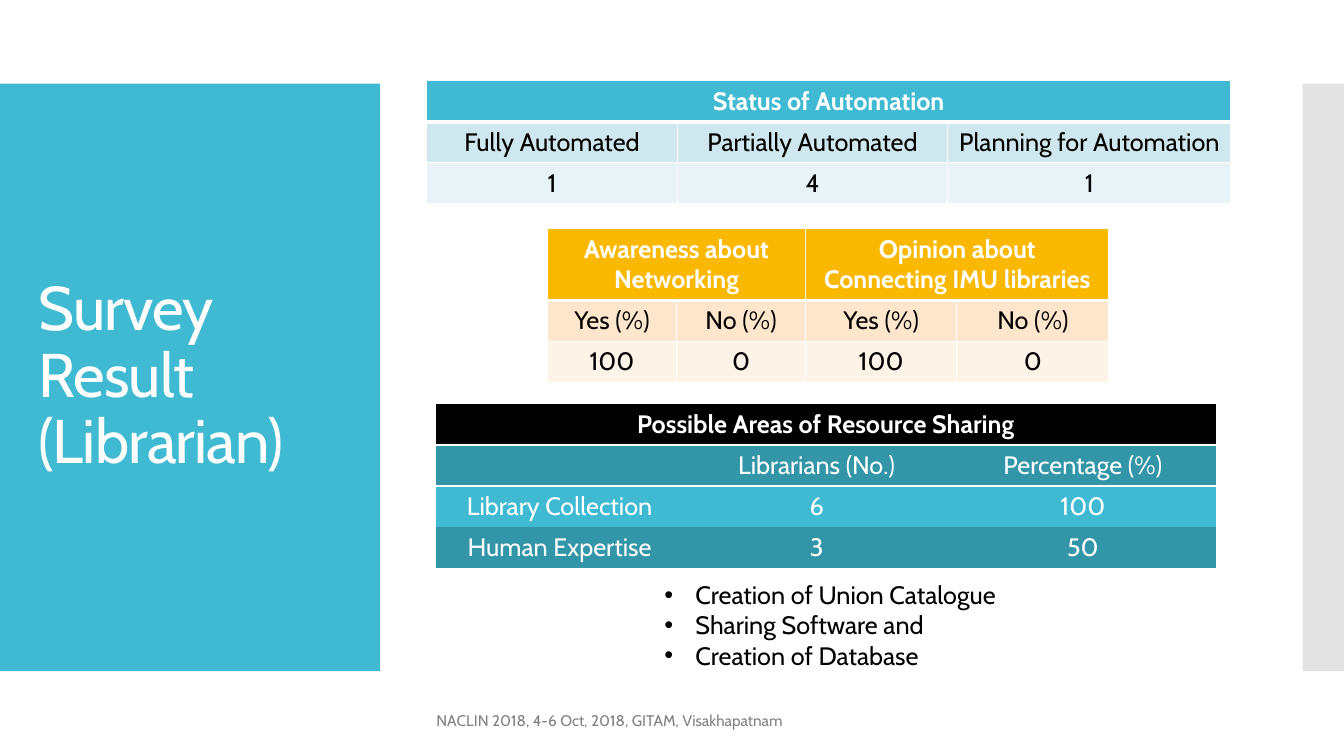
import pptx
import pptx.dml.color
import pptx.enum.shapes
import pptx.enum.text
import pptx.oxml
import pptx.oxml.ns
import pptx.util
from lxml import etree

PX = 9144  # EMU; 100 px to the inch
THEME = {
    "font": "Cabin",
    "title_size": 44, "body_size": 18, "footer_size": 11,
    "white": "FFFFFF", "black": "000000", "footer_grey": "808080",
    "teal": "40BAD2", "dark_teal": "3395A8", "side_grey": "C8C8C8",
    "teal_tint": "CFE7EE", "pale_teal": "E8F3F7",
    "amber": "FAB900", "amber_tint": "FDE6CC", "pale_amber": "FEF3E7",
}
ALIGN = pptx.enum.text.PP_ALIGN
ANCHOR = pptx.enum.text.MSO_ANCHOR
NO_TABLE_STYLE = "{2D5ABB26-0587-4C30-8999-92F81FD0307C}"


def color(name):
    return pptx.dml.color.RGBColor.from_string(THEME[name])


def write(text_frame, text, size="body_size", ink="black", bold=False,
          align=ALIGN.LEFT, line_spacing=None, tracking=None, bullet_indent=None):
    """Fill the frame, one paragraph per line of text; a vertical tab breaks a line."""
    for number, line in enumerate(text.split("\n")):
        paragraph = text_frame.add_paragraph() if number else text_frame.paragraphs[0]
        paragraph.text = line
        paragraph.alignment = align
        paragraph.line_spacing = line_spacing
        if bullet_indent:
            properties = paragraph._p.get_or_add_pPr()
            properties.set("marL", str(bullet_indent * PX))
            properties.set("indent", str(-bullet_indent * PX))
            for tag, key, value in (("a:buFont", "typeface", "Arial"), ("a:buChar", "char", "•")):
                etree.SubElement(properties, pptx.oxml.ns.qn(tag)).set(key, value)
        for run in paragraph.runs:
            run.font.name = THEME["font"]
            run.font.size = pptx.util.Pt(THEME[size])
            run.font.bold = bold
            run.font.color.rgb = color(ink)
            if tracking:
                run._r.get_or_add_rPr().set("spc", str(tracking))


presentation = pptx.Presentation()
presentation.slide_width = 1333 * PX
presentation.slide_height = 750 * PX
slide = presentation.slides.add_slide(presentation.slide_layouts[5])

# Side panels
for left, width, fill, opacity in ((0, 377, "teal", 100), (1292, 41, "side_grey", 50)):
    panel = slide.shapes.add_shape(pptx.enum.shapes.MSO_SHAPE.RECTANGLE,
                                   left * PX, 83 * PX, width * PX, 583 * PX)
    panel.shadow.inherit = False
    panel.fill.solid()
    panel.fill.fore_color.rgb = color(fill)
    panel.line.fill.background()
    if opacity < 100:
        tint = panel._element.spPr.find(".//" + pptx.oxml.ns.qn("a:srgbClr"))
        etree.SubElement(tint, pptx.oxml.ns.qn("a:alpha")).set("val", str(opacity * 1000))

# Title, moved in front of the panels
title = slide.shapes.title
slide.shapes._spTree.append(title._element)
title.left, title.top, title.width, title.height = (n * PX for n in (28, 123, 322, 503))
title.text_frame.auto_size = pptx.enum.text.MSO_AUTO_SIZE.NONE
title.text_frame.word_wrap = True
title.text_frame.vertical_anchor = ANCHOR.MIDDLE
write(title.text_frame, "Survey Result\v(Librarian)", size="title_size", ink="white",
      line_spacing=0.9, tracking=-60)

# Tables: None continues the cell to its left; rules are widths in points
tables = [
    {"at": (423, 80), "columns": (249, 268, 281), "rows": (41, 40, 40),
     "fills": ("teal", "teal_tint", "pale_teal"),
     "ink": "black", "rule": 1, "header_rule": 3,
     "cells": [("Status of Automation", None, None),
               ("Fully Automated", "Partially Automated", "Planning for Automation"),
               ("1", "4", "1")]},
    {"at": (543, 227), "columns": (128, 128, 150, 151), "rows": (71, 40, 40),
     "fills": ("amber", "amber_tint", "pale_amber"),
     "ink": "black", "rule": 1, "header_rule": 3,
     "cells": [("Awareness about Networking", None,
                "Opinion about Connecting IMU libraries", None),
               ("Yes (%)", "No (%)", "Yes (%)", "No (%)"),
               ("100", "0", "100", "0")]},
    {"at": (432, 401), "columns": (246, 264, 264), "rows": (40, 40, 40, 40),
     "fills": ("black", "dark_teal", "teal", "dark_teal"),
     "ink": "white", "rule": 0, "header_rule": 2,
     "cells": [("Possible Areas of Resource Sharing", None, None),
               ("", "Librarians (No.)", "Percentage (%)"),
               ("Library Collection", "6", "100"),
               ("Human Expertise", "3", "50")]},
]
for data in tables:
    left, top = data["at"]
    table = slide.shapes.add_table(
        len(data["rows"]), len(data["columns"]), left * PX, top * PX,
        sum(data["columns"]) * PX, sum(data["rows"]) * PX).table
    table.horz_banding = False
    table._tbl.tblPr.find(pptx.oxml.ns.qn("a:tableStyleId")).text = NO_TABLE_STYLE
    for column, width in zip(table.columns, data["columns"]):
        column.width = width * PX
    for row, height in zip(table.rows, data["rows"]):
        row.height = height * PX

    for row_number, texts in enumerate(data["cells"]):
        is_header = row_number == 0
        rule, header_rule = data["rule"], data["header_rule"]
        sides = {"L": rule, "R": rule,
                 "T": header_rule if row_number == 1 else rule,
                 "B": header_rule if is_header else rule}
        for column_number, text in enumerate(texts):
            cell = table.cell(row_number, column_number)
            properties = cell._tc.get_or_add_tcPr()
            for side, points in sides.items():
                if points:
                    properties.append(pptx.oxml.parse_xml(
                        f'<a:ln{side} {pptx.oxml.ns.nsdecls("a")} w="{points * 12700}">'
                        f'<a:solidFill><a:srgbClr val="{THEME["white"]}"/></a:solidFill>'
                        f'</a:ln{side}>'))
            cell.fill.solid()
            cell.fill.fore_color.rgb = color(data["fills"][row_number])
            if text is None:
                continue
            write(cell.text_frame, text, ink="white" if is_header else data["ink"],
                  bold=is_header, align=ALIGN.CENTER)
            end = column_number
            while end + 1 < len(texts) and texts[end + 1] is None:
                end += 1
            if end > column_number:
                cell.merge(table.cell(row_number, end))

# Sharing ideas and footer
text_boxes = [
    ((649, 570, 360, 101), ANCHOR.TOP,
     "Creation of Union Catalogue\nSharing Software and\nCreation of Database",
     {"bullet_indent": 31}),
    ((423, 695, 646, 40), ANCHOR.MIDDLE,
     "NACLIN 2018, 4-6 Oct, 2018, GITAM, Visakhapatnam",
     {"size": "footer_size", "ink": "footer_grey"}),
]
for box, anchor, text, text_format in text_boxes:
    text_frame = slide.shapes.add_textbox(*(n * PX for n in box)).text_frame
    text_frame.word_wrap = True
    text_frame.vertical_anchor = anchor
    write(text_frame, text, **text_format)

presentation.save("out.pptx")
